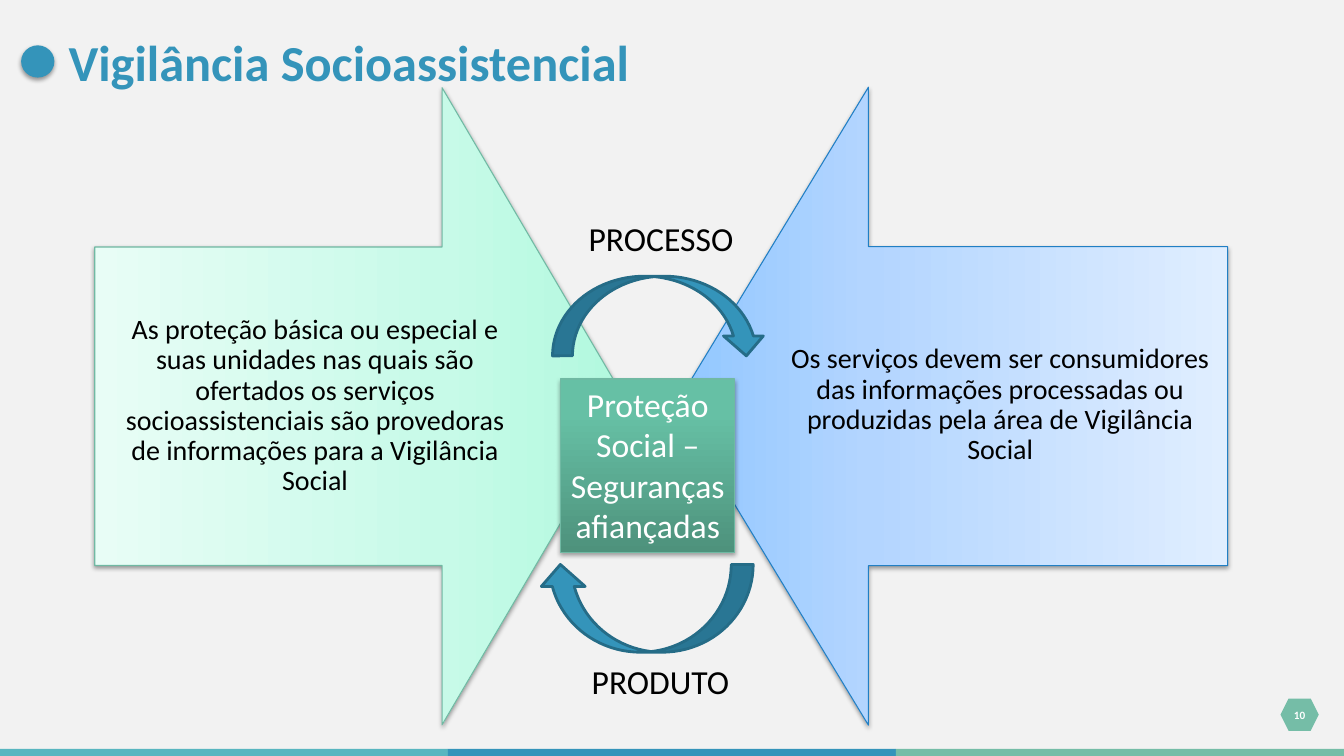
"""Build the slide on Vigilância Socioassistencial with its two facing arrows."""
from copy import deepcopy

from lxml.etree import SubElement
from pptx import Presentation
from pptx.dml.color import RGBColor
from pptx.enum.shapes import MSO_SHAPE as SHAPE
from pptx.enum.text import MSO_ANCHOR as ANCHOR, MSO_AUTO_SIZE as FIT, PP_ALIGN as ALIGN
from pptx.oxml.ns import qn
from pptx.util import Inches, Pt

BLUE, GREEN, TEAL = "3494BA", "75BDA7", "58B6C0"
color = RGBColor.from_string


def add_part(kind, place, fill, line=None, width=0.75, rotation=0, adjust=(), shadow=None):
    part = slide.shapes.add_shape(kind, *map(Inches, place))
    part.rotation = rotation
    part.shadow.inherit = False
    for index, value in enumerate(adjust):
        part.adjustments[index] = value
    if isinstance(fill, str):
        part.fill.solid()
        part.fill.fore_color.rgb = color(fill)
    else:
        part.fill.gradient()
        part.fill.gradient_angle = 90
        stops = part._element.spPr.find(".//" + qn("a:gsLst"))
        stops.append(deepcopy(stops[-1]))
        for stop, (position, shade) in zip(part.fill.gradient_stops, fill):
            stop.position = position
            stop.color.rgb = color(shade)
    if line:
        part.line.color.rgb = color(line)
        part.line.width = Pt(width)
    else:
        part.line.fill.background()
    if shadow:
        distance, opacity = shadow
        effects = part._element.spPr.find(qn("a:effectLst"))
        outer = SubElement(effects, qn("a:outerShdw"), blurRad=str(Pt(3.15)),
                           dist=str(Pt(distance)), dir="5400000", rotWithShape="0")
        black = SubElement(outer, qn("a:srgbClr"), val="000000")
        SubElement(black, qn("a:alpha"), val=str(opacity * 1000))
    return part


def write(part, words, size, shade="000000", bold=False, align=ALIGN.CENTER,
          anchor=ANCHOR.MIDDLE, inset=(0, 0), fit=FIT.NONE, spacing=1.0):
    frame = part.text_frame
    side, edge = map(Inches, inset)
    frame_format = {"word_wrap": True, "auto_size": fit, "vertical_anchor": anchor,
                    "margin_left": side, "margin_right": side,
                    "margin_top": edge, "margin_bottom": edge}
    for name, value in frame_format.items():
        setattr(frame, name, value)
    paragraph = frame.paragraphs[0]
    paragraph.alignment = align
    paragraph.line_spacing = spacing
    run = paragraph.add_run()
    run.text = words
    for name, value in {"name": "Calibri", "size": Pt(size), "bold": bold}.items():
        setattr(run.font, name, value)
    run.font.color.rgb = color(shade)


deck = Presentation()
deck.slide_width, deck.slide_height = Inches(13.33), Inches(7.5)
slide = deck.slides.add_slide(deck.slide_layouts[6])
slide.background.fill.solid()
slide.background.fill.fore_color.rgb = color("F2F2F2")

band_width = 13.33 / 3
for index, shade in enumerate((TEAL, BLUE, GREEN)):
    add_part(SHAPE.RECTANGLE, (index * band_width, 7.43, band_width, 0.07), shade)
page_number = add_part(SHAPE.HEXAGON, (12.7, 6.93, 0.38, 0.32), GREEN)
write(page_number, "10", 8, "FFFFFF", bold=True)

add_part(SHAPE.OVAL, (0.21, 0.45, 0.33, 0.32), BLUE, shadow=(1.57, 38))
title = slide.shapes.add_textbox(*map(Inches, (0.68, 0.29, 11.65, 0.63)))
write(title, "Vigilância Socioassistencial", 36, BLUE, bold=True, align=ALIGN.LEFT)

sides = [
    ((0.43, 1.38, 6.32, 5.3), 270, ("B1F9DE", "C7FAE8", "E8FDF6"), "70B9A3",
     (0.94, 2.45, 4.37, 3.16),
     "As proteção básica ou especial e suas unidades nas quais são ofertados os serviços "
     "socioassistenciais são provedoras de informações para a Vigilância Social"),
    ((6.27, 1.29, 6.33, 5.48), 90, ("91C7FF", "B3D5FF", "E0EEFF"), "217FC4",
     (7.66, 2.44, 4.52, 3.16),
     "Os serviços devem ser consumidores das informações processadas ou produzidas "
     "pela área de Vigilância Social"),
]
for arrow_place, turn, shades, outline, message_place, words in sides:
    add_part(SHAPE.DOWN_ARROW, arrow_place, list(zip((0, 0.35, 1), shades)), outline,
             rotation=turn, adjust=(0.5, 0.35), shadow=(1.57, 38))
    message = slide.shapes.add_textbox(*map(Inches, message_place))
    write(message, words, 20, inset=(0.16, 0.16), spacing=0.9)

protection = add_part(SHAPE.RECTANGLE, (5.56, 3.76, 1.73, 1.72),
                      [(0, "4E927C"), (0.8, "66C0A5"), (1, "64C3A6")], "70B9A3",
                      shadow=(1.81, 35))
label_format = {"anchor": ANCHOR.TOP, "inset": (0.1, 0.05), "fit": FIT.SHAPE_TO_FIT_TEXT}
write(protection, "Proteção Social – Seguranças afiançadas", 24, "FFFFFF", **label_format)

cycle = [
    ((5.48, 2.74, 2.12, 0.79), 0, (5.74, 2.11, 1.73, 0.5), "PROCESSO"),
    ((5.34, 5.6, 2.13, 0.87), 180, (5.77, 6.51, 1.73, 0.5), "PRODUTO"),
]
for curve_place, turn, label_place, words in cycle:
    add_part(SHAPE.CURVED_DOWN_ARROW, curve_place, BLUE, "256C87", 2, turn, (0.25, 0.5, 0.25))
    label = slide.shapes.add_textbox(*map(Inches, label_place))
    write(label, words, 24, align=ALIGN.LEFT, **label_format)

deck.save("out.pptx")
